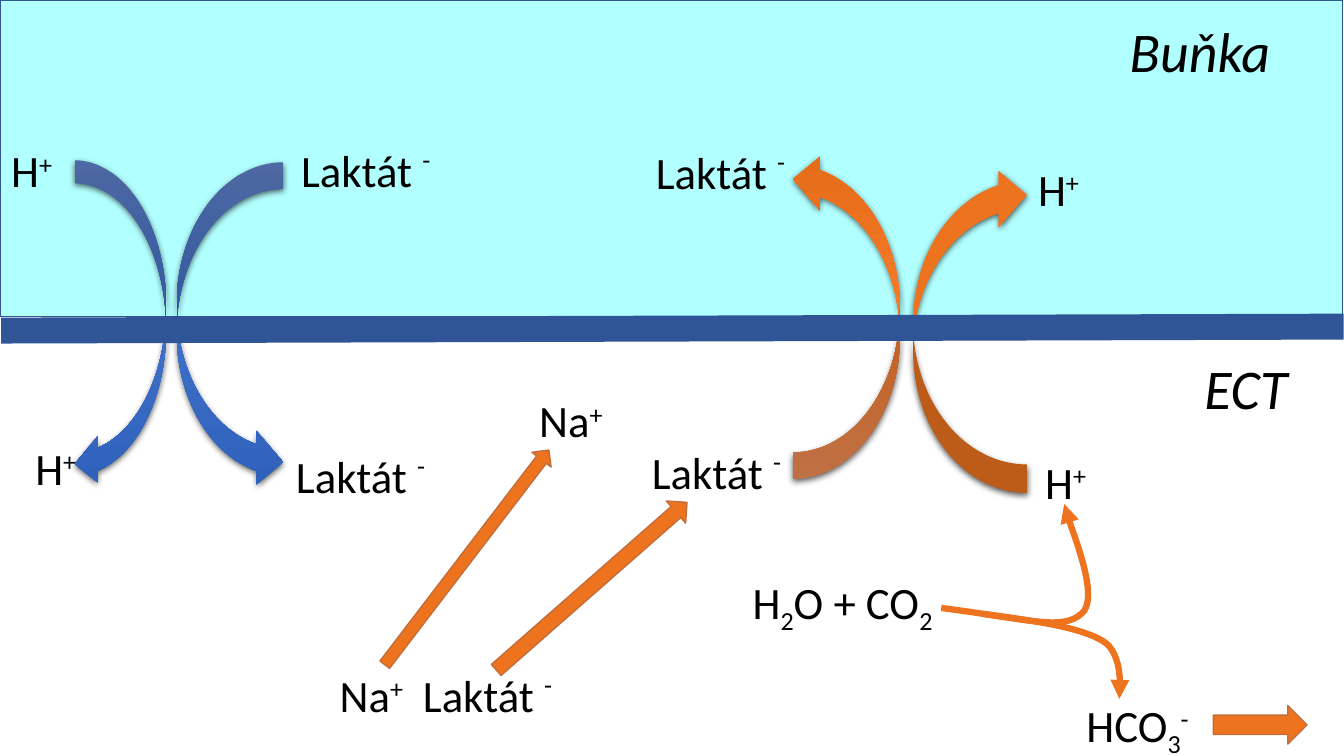
import lxml.etree
import pptx
import pptx.dml.color
import pptx.enum.shapes
import pptx.enum.text
import pptx.oxml.ns
import pptx.util

Cm = pptx.util.Cm
Pt = pptx.util.Pt
RGBColor = pptx.dml.color.RGBColor
Shape = pptx.enum.shapes.MSO_SHAPE
qn = pptx.oxml.ns.qn

BLACK = RGBColor(0x00, 0x00, 0x00)
CELL_FILL = RGBColor(0xB2, 0xFF, 0xFF)
CELL_EDGE = RGBColor(0x32, 0x54, 0x91)
MEMBRANE = RGBColor(0x2F, 0x55, 0x97)
ORANGE = RGBColor(0xED, 0x73, 0x1F)
ORANGE_EDGE = RGBColor(0xC3, 0x6D, 0x3A)
BLUE_GRADIENT = [RGBColor(0x61, 0x83, 0xCB), RGBColor(0x3E, 0x70, 0xCA), RGBColor(0x30, 0x62, 0xBB)]
ORANGE_GRADIENT = [RGBColor(0xF1, 0x8C, 0x57), RGBColor(0xF6, 0x7B, 0x28), RGBColor(0xE5, 0x6C, 0x19)]

LACTATE = [("Laktát ", 0), ("-", 40)]
PROTON = [("H", 0), ("+", 30)]
SODIUM = [("Na", 0), ("+", 30)]
BICARBONATE = [("HCO", 0), ("3", -25), ("-", 30)]
WATER_AND_CO2 = [("H", 0), ("2", -25), ("O + CO", 0), ("2", -25)]

LABELS = [
    (LACTATE, 3.84, [(7.21, 11.18), (7.34, 3.48), (16.18, 11.07), (16.28, 3.53), (10.41, 16.69)]),
    (PROTON, 1.6, [(0.03, 3.48), (0.64, 10.97), (26.09, 11.33), (25.91, 3.94)]),
    (SODIUM, 2.18, [(8.31, 16.69), (13.34, 9.78)]),
    (BICARBONATE, 3.2, [(27.13, 17.45)]),
    (WATER_AND_CO2, 5.21, [(18.72, 14.35)]),
]
TRANSPORTS = [
    (1.88, 4.04, 2.31, BLUE_GRADIENT, False, 0),
    (4.45, 4.09, 2.69, BLUE_GRADIENT, True, 0),
    (19.99, 3.84, 2.69, ORANGE_GRADIENT, True, 180),
    (23.01, 4.19, 2.87, [ORANGE], False, 180),
]
BLOCK_ARROWS = [
    (11.71, 14.4, 6.4, 0.74, 318.7),
    (8.36, 13.74, 6.81, 0.61, 307.4),
    (30.58, 17.78, 2.36, 0.97, 0),
]
TO_BICARBONATE = [(24.59, 15.88), (25.83, 15.77), (27.05, 15.65), (27.71, 15.88),
                  (28.32, 16.1), (28.42, 17.2), (28.42, 17.2)]
TO_PROTON = [(23.72, 15.32), (25.91, 15.6), (26.75, 15.9), (27.25, 15.47),
             (27.79, 15.04), (26.9, 13.16), (26.82, 12.7)]


def add_xml(parent, tag, **attributes):
    return lxml.etree.SubElement(parent, qn(tag), attributes)


def curve_points(controls, steps=20):
    points = [controls[0]]
    for first in range(0, len(controls) - 1, 3):
        segment = controls[first:first + 4]
        for step in range(1, steps + 1):
            t = step / steps
            weights = ((1 - t) ** 3, 3 * t * (1 - t) ** 2, 3 * t * t * (1 - t), t ** 3)
            points.append(tuple(sum(w * p[axis] for w, p in zip(weights, segment)) for axis in (0, 1)))
    return [(Cm(x), Cm(y)) for x, y in points]


class Diagram:
    font = "Calibri"

    def __init__(self, page):
        self.page = page

    def shape(self, kind, x, y, width, height, fill, edge=None, rotation=0):
        shape = self.page.shapes.add_shape(kind, Cm(x), Cm(y), Cm(width), Cm(height))
        shape.rotation = rotation
        shape.shadow.inherit = False
        shape.fill.solid()
        shape.fill.fore_color.rgb = fill
        if edge is None:
            shape.line.fill.background()
        else:
            shape.line.color.rgb = edge
            shape.line.width = Pt(1)
        return shape

    def transport(self, x, y, width, colors, flipped, rotation):
        arrow = self.shape(Shape.CURVED_LEFT_ARROW, x, y, width, 8.23, colors[0], rotation=rotation)
        properties = arrow._element.spPr
        if flipped:
            properties.find(qn("a:xfrm")).set("flipH", "1")
        if len(colors) > 1:
            arrow.fill.gradient()
            arrow.fill.gradient_angle = 270
            stops = properties.find(".//" + qn("a:gsLst"))
            stops.clear()
            for index, color in enumerate(colors):
                stop = add_xml(stops, "a:gs", pos=str(index * 50000))
                add_xml(stop, "a:srgbClr", val=str(color))
        shadow = add_xml(properties.find(qn("a:effectLst")), "a:outerShdw", blurRad=str(Pt(4.5)),
                         dist=str(Pt(1.5)), dir="5400000", algn="ctr", rotWithShape="0")
        add_xml(add_xml(shadow, "a:srgbClr", val=str(BLACK)), "a:alpha", val="63000")

    def text(self, x, y, width, height, spans, size, wrap=False, italic=False):
        box = self.page.shapes.add_textbox(Cm(x), Cm(y), Cm(width), Cm(height))
        box.text_frame.word_wrap = wrap
        box.text_frame.auto_size = pptx.enum.text.MSO_AUTO_SIZE.SHAPE_TO_FIT_TEXT
        para = box.text_frame.paragraphs[0]
        for words, baseline in spans:
            span = para.add_run()
            span.text = words
            span.font.name = self.font
            span.font.size = Pt(size)
            span.font.italic = italic
            span.font.color.rgb = BLACK
            if baseline:
                span._r.get_or_add_rPr().set("baseline", str(baseline * 1000))

    def line(self, start, end, color, width):
        line = self.page.shapes.add_connector(
            pptx.enum.shapes.MSO_CONNECTOR.STRAIGHT, *map(Cm, start + end))
        line.line.color.rgb = color
        line.line.width = Pt(width)
        add_xml(line._element.spPr, "a:effectLst")

    def flow(self, controls, rotation=0):
        points = curve_points(controls)
        builder = self.page.shapes.build_freeform(*points[0], scale=1.0)
        builder.add_line_segments(points[1:], close=False)
        flow = builder.convert_to_shape()
        flow.rotation = rotation
        flow.shadow.inherit = False
        flow.fill.background()
        flow.line.color.rgb = ORANGE
        flow.line.width = Pt(4.5)
        add_xml(flow.line._get_or_add_ln(), "a:tailEnd", type="triangle")


def main():
    deck = pptx.Presentation()
    deck.slide_width = Cm(33.87)
    deck.slide_height = Cm(19.05)
    diagram = Diagram(deck.slides.add_slide(deck.slide_layouts[6]))
    diagram.shape(Shape.RECTANGLE, 0, 0, 33.83, 7.98, CELL_FILL, CELL_EDGE)
    for spans, width, places in LABELS:
        for x, y in places:
            diagram.text(x, y, width, 1.63, spans, 32)
    for transport in TRANSPORTS:
        diagram.transport(*transport)
    diagram.line((33.86, 8.23), (0.03, 8.33), MEMBRANE, 18.5)
    for x, y, width, height, rotation in BLOCK_ARROWS:
        diagram.shape(Shape.RIGHT_ARROW, x, y, width, height, ORANGE, ORANGE_EDGE, rotation)
    diagram.flow(TO_BICARBONATE, 12.9)
    diagram.flow(TO_PROTON)
    for title, x, y in (("Buňka", 28.22, 0.3), ("ECT", 30.1, 8.79)):
        diagram.text(x, y, 4.72, 1.98, [(title, 0)], 40, wrap=True, italic=True)
    deck.save("out.pptx")


if __name__ == "__main__":
    main()
